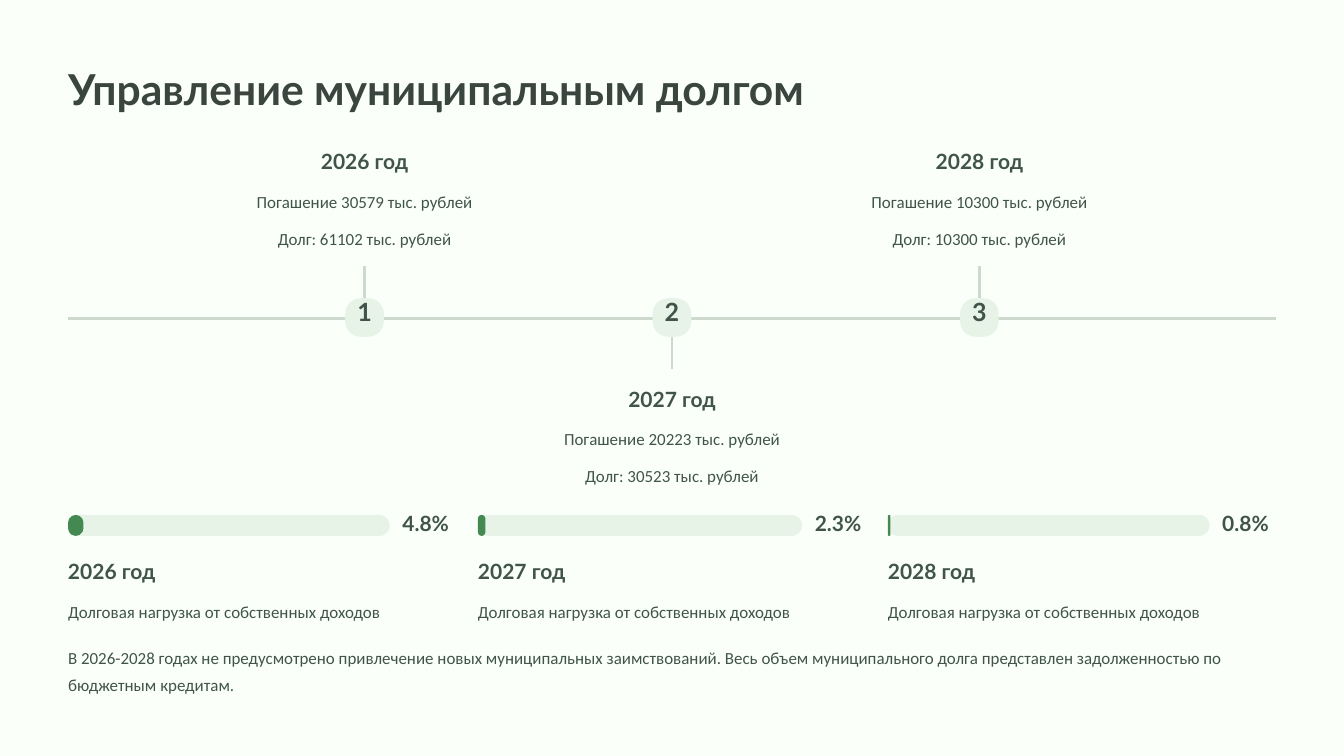
"""Build a slide on municipal debt: a timeline above three load bars."""
from lxml import etree
from pptx import Presentation
from pptx import util as u
from pptx.dml.color import RGBColor
from pptx.enum import shapes, text
from pptx.oxml.ns import qn

COLORS = {"page": "FAFFFA", "title": "3B4540", "text": "405449",
          "line": "CED9CE", "pale": "E8F3E8", "green": "438951"}
LEFT, WIDTH = 0.81, 14.38
AXIS, BADGE = 3.78, 0.46
YEARS = [("2026 год", 30579, 61102, 4.8, 3.83),
         ("2027 год", 20223, 30523, 2.3, 3.86),
         ("2028 год", 10300, 10300, 0.8, 3.83)]
NOTE = ("В 2026-2028 годах не предусмотрено привлечение новых муниципальных "
        "заимствований. Весь объем муниципального долга представлен "
        "задолженностью по бюджетным кредитам.")
TITLE = ("Lato", 36.5, 45.5, True)
HEAD = ("Lato", 18, 22.5, True)
BODY = ("Calibri", 14.5, 23, False)
DIGIT = ("Lato", 21.5, 21.5, True)
SHARE = ("Lato", 18, 18, True)


def rgb(name):
    return RGBColor.from_string(COLORS[name])


def add_text(slide, words, box, style, mid=False, color="text"):
    frame = slide.shapes.add_textbox(*map(u.Inches, box)).text_frame
    frame.word_wrap = True
    frame.margin_left = frame.margin_right = 0
    frame.margin_top = frame.margin_bottom = 0
    frame.text = words
    para = frame.paragraphs[0]
    para.alignment = text.PP_ALIGN.CENTER if mid else text.PP_ALIGN.LEFT
    name, size, pitch, bold = style
    para.line_spacing = u.Pt(pitch)
    font = para.runs[0].font
    font.name, font.size, font.bold = name, u.Pt(size), bold
    font.color.rgb = rgb(color)


def add_pill(slide, box, color, curve):
    pill = slide.shapes.add_shape(
        shapes.MSO_SHAPE.ROUNDED_RECTANGLE, *map(u.Inches, box))
    pill.adjustments[0] = curve
    pill.shadow.inherit = False
    pill.fill.solid()
    pill.fill.fore_color.rgb = rgb(color)
    pill.line.fill.background()
    return pill


def add_line(slide, *ends):
    line = slide.shapes.add_connector(
        shapes.MSO_CONNECTOR.STRAIGHT, *map(u.Inches, ends))
    line.line.color.rgb = rgb("line")
    line.line.width = u.Pt(2.25)
    props = line._element.find(qn("p:spPr"))
    etree.SubElement(props, qn("a:effectLst"))
    return line


def add_stop(slide, index, year, paid, debt):
    mid = 4.34 + 3.66 * index
    above = index % 2 == 0
    side = -1 if above else 1
    edge = AXIS + side * BADGE / 2
    badge = add_pill(slide, (mid - BADGE / 2, AXIS - BADGE / 2, BADGE, BADGE),
                     "pale", 0.4)
    stem = add_line(slide, mid, edge, mid, AXIS + side * 0.61)
    stem.begin_connect(badge, 0 if above else 2)
    add_text(slide, str(index + 1), (mid - 0.15, 3.59, 0.3, 0.38), DIGIT, True)
    top = 1.76 if above else 4.59
    rows = [(year, HEAD), (f"Погашение {paid} тыс. рублей", BODY),
            (f"Долг: {debt} тыс. рублей", BODY)]
    for row, (words, style) in enumerate(rows):
        add_text(slide, words, (mid - 3.33, top + 0.44 * row, 6.66, 0.32),
                 style, True)


def add_load(slide, index, year, share, width):
    left = LEFT + 4.88 * index
    add_pill(slide, (left, 6.13, width, 0.25), "pale", 0.5)
    add_pill(slide, (left, 6.13, width * share / 100, 0.25), "green", 0.5)
    add_text(slide, f"{share}%", (left + width + 0.15, 6.13, 0.65, 0.25), SHARE)
    add_text(slide, year, (left, 6.64, 2.54, 0.32), HEAD)
    add_text(slide, "Долговая нагрузка от собственных доходов",
             (left, 7.08, 4.62, 0.32), BODY)


def main():
    deck = Presentation()
    deck.slide_width, deck.slide_height = u.Inches(16), u.Inches(9)
    slide = deck.slides.add_slide(deck.slide_layouts[6])
    slide.background.fill.solid()
    slide.background.fill.fore_color.rgb = rgb("page")
    add_text(slide, "Управление муниципальным долгом",
             (LEFT, 0.72, 10.02, 0.63), TITLE, color="title")
    add_line(slide, LEFT, AXIS + 0.01, LEFT + WIDTH, AXIS + 0.01)
    for index, (year, paid, debt, share, width) in enumerate(YEARS):
        add_stop(slide, index, year, paid, debt)
        add_load(slide, index, year, share, width)
    add_text(slide, NOTE, (LEFT, 7.63, WIDTH, 0.65), BODY)
    deck.save("out.pptx")


if __name__ == "__main__":
    main()
